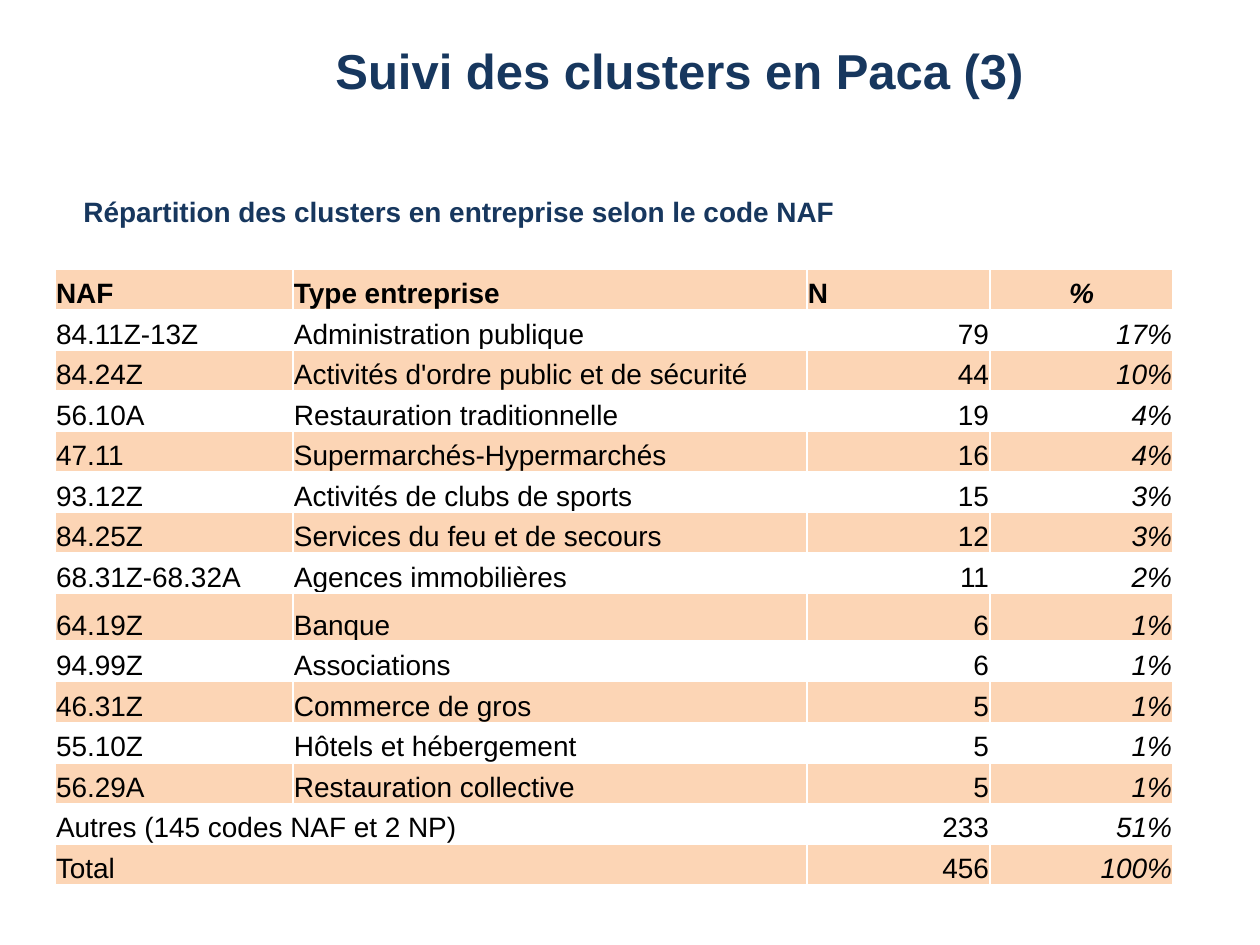
from lxml import etree
from pptx import Presentation
from pptx import util as u
from pptx.dml.color import RGBColor
from pptx.enum import text
from pptx.oxml import ns

PX = 914400 / 126
NAVY, BLACK, PEACH, WHITE = "17375E", "000000", "FCD5B5", "FFFFFF"
LEFT, CENTER, RIGHT = text.PP_ALIGN.LEFT, text.PP_ALIGN.CENTER, text.PP_ALIGN.RIGHT


def px(n):
    return u.Emu(round(n * PX))


def rgb(value):
    return RGBColor.from_string(value)


class Deck:
    font = "Arial"

    def __init__(self, width, height):
        self.prs = Presentation()
        self.prs.slide_width, self.prs.slide_height = px(width), px(height)

    def new_slide(self):
        self.s = self.prs.slides.add_slide(self.prs.slide_layouts[5])

    def run(self, p, words, size, color, bold=False, italic=False, align=LEFT):
        p.alignment = align
        r = p.add_run()
        r.text = words
        f = r.font
        f.name, f.size, f.bold, f.italic = self.font, u.Pt(size), bold, italic
        f.color.rgb = rgb(color)

    def title(self, words, x, y, w, h):
        sp = self.s.shapes.title
        sp.left, sp.top, sp.width, sp.height = map(px, (x, y, w, h))
        tf = sp.text_frame
        tf.margin_left = tf.margin_right = tf.margin_top = tf.margin_bottom = 0
        tf.auto_size = text.MSO_AUTO_SIZE.NONE
        tf.word_wrap = False
        tf.vertical_anchor = text.MSO_ANCHOR.MIDDLE
        self.run(tf.paragraphs[0], words, 28, NAVY, bold=True, align=CENTER)

    def heading(self, words, x, y, w, h):
        tf = self.s.shapes.add_textbox(*map(px, (x, y, w, h))).text_frame
        tf.word_wrap = True
        tf.auto_size = text.MSO_AUTO_SIZE.SHAPE_TO_FIT_TEXT
        self.run(tf.paragraphs[0], words, 16, NAVY, bold=True)

    def borders(self, cell, color):
        tc_pr = cell._tc.get_or_add_tcPr()
        for i, side in enumerate(("lnL", "lnR", "lnT", "lnB")):
            ln = etree.Element(ns.qn("a:" + side), w=str(u.Pt(1)))
            fill = etree.SubElement(ln, ns.qn("a:solidFill"))
            etree.SubElement(fill, ns.qn("a:srgbClr"), val=color)
            tc_pr.insert(i, ln)

    def table(self, rows, x, y, widths, heights):
        frame = self.s.shapes.add_table(len(rows), len(widths), px(x), px(y),
                                        px(sum(widths)), px(sum(heights)))
        tbl = frame.table
        tbl.first_row = tbl.horz_banding = False
        for column, w in zip(tbl.columns, widths):
            column.width = px(w)
        for i, (row, h) in enumerate(zip(rows, heights)):
            tbl.rows[i].height = px(h)
            for j, words in enumerate(row):
                cell = tbl.cell(i, j)
                cell.fill.solid()
                cell.fill.fore_color.rgb = rgb(WHITE if i % 2 else PEACH)
                self.borders(cell, WHITE)
                cell.margin_left = cell.margin_right = cell.margin_top = px(1)
                cell.margin_bottom = 0
                cell.vertical_anchor = text.MSO_ANCHOR.BOTTOM
                if words is None:
                    continue
                # Header: only the percent sign is centred; body: numbers go right
                if i == 0:
                    align = CENTER if j == 3 else LEFT
                else:
                    align = RIGHT if j >= 2 else LEFT
                self.run(cell.text_frame.paragraphs[0], words, 16, BLACK,
                         bold=i == 0, italic=j == 3, align=align)
            # A missing company type means the label spans two columns
            if row[1] is None:
                tbl.cell(i, 0).merge(tbl.cell(i, 1))


ROWS = [
    ("NAF", "Type entreprise", "N", "%"),
    ("84.11Z-13Z", "Administration publique", "79", "17%"),
    ("84.24Z", "Activités d'ordre public et de sécurité", "44", "10%"),
    ("56.10A", "Restauration traditionnelle", "19", "4%"),
    ("47.11", "Supermarchés-Hypermarchés", "16", "4%"),
    ("93.12Z", "Activités de clubs de sports", "15", "3%"),
    ("84.25Z", "Services du feu et de secours", "12", "3%"),
    ("68.31Z-68.32A", "Agences immobilières", "11", "2%"),
    ("64.19Z", "Banque", "6", "1%"),
    ("94.99Z", "Associations", "6", "1%"),
    ("46.31Z", "Commerce de gros", "5", "1%"),
    ("55.10Z", "Hôtels et hébergement", "5", "1%"),
    ("56.29A", "Restauration collective", "5", "1%"),
    ("Autres (145 codes NAF et 2 NP)", None, "233", "51%"),
    ("Total", None, "456", "100%"),
]


def main():
    deck = Deck(1260, 945)
    deck.new_slide()

    # Title and heading
    deck.title("Suivi des clusters en Paca (3)", 263, 4, 833, 131)
    deck.heading("Répartition des clusters en entreprise selon le code NAF",
                 71, 188, 1091, 47)

    # Table: the bank row is taller, the others share the remaining height
    table_height, bank_height = 616, 48
    row_height = (table_height - bank_height) / (len(ROWS) - 1)
    heights = [bank_height if row[1] == "Banque" else row_height for row in ROWS]
    deck.table(ROWS, 55, 269, (238, 514, 183, 183), heights)

    deck.prs.save("out.pptx")


if __name__ == "__main__":
    main()
